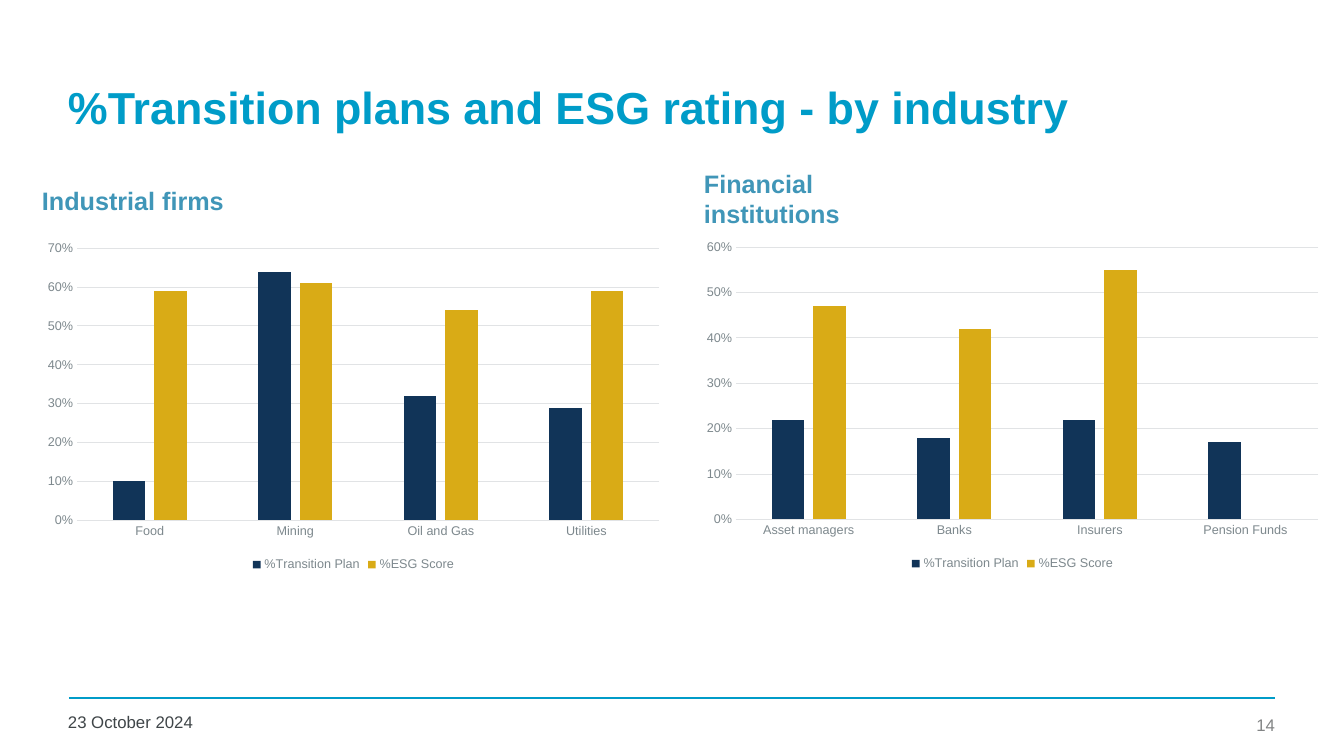
from lxml import etree
from pptx import Presentation
from pptx.chart.data import CategoryChartData
from pptx.dml.color import RGBColor
from pptx.enum.chart import XL_CHART_TYPE, XL_LEGEND_POSITION, XL_TICK_MARK
from pptx.enum.shapes import MSO_CONNECTOR
from pptx.enum.text import MSO_ANCHOR, PP_ALIGN
from pptx.oxml.ns import qn
from pptx.util import Pt

COLUMNS = XL_CHART_TYPE.COLUMN_CLUSTERED
BOTTOM = XL_LEGEND_POSITION.BOTTOM
NO_TICK = XL_TICK_MARK.NONE
STRAIGHT = MSO_CONNECTOR.STRAIGHT
TOP, MIDDLE = MSO_ANCHOR.TOP, MSO_ANCHOR.MIDDLE
LEFT, RIGHT = PP_ALIGN.LEFT, PP_ALIGN.RIGHT

EMU_PER_PX = 914400 / 100.8
SLIDE_SIZE = (1344, 756)

THEME = {
    "font": "Arial",
    "title": {"size": 32, "color": "009CC8", "bold": True},
    "heading": {"size": 18, "color": "4096B8", "bold": True},
    "date": {"size": 12, "color": "3F4548", "bold": False},
    "number": {"size": 12, "color": "828485", "bold": False},
    "chart": {"size": 10, "color": "3F4548", "bold": False},
    "label": {"size": 9, "color": "7D888D", "bold": False},
    "grid": "E1E3E5",
    "rule": "009CC8",
    "series": ["113458", "D9AB16"],
}

# text, style, (left, top, width, height), anchor, alignment
TEXTS = [
    ("%Transition plans and ESG rating - by industry", "title",
     (58, 44, 1219, 126), MIDDLE, LEFT),
    ("Industrial firms", "heading", (32, 180, 263, 40), TOP, LEFT),
    ("Financial institutions", "heading", (694, 163, 263, 40), TOP, LEFT),
    ("23 October 2024", "date", (58, 707, 296, 36), TOP, LEFT),
    ("14", "number", (1190, 706, 95, 37), MIDDLE, RIGHT),
]
FOOTER_RULE = (69, 698, 1275, 698)

SERIES_NAMES = ["%Transition Plan", "%ESG Score"]
CHART_SIZE = (637, 342)
CHARTS = [
    {"at": (35, 234), "max": 0.7,
     "rows": {"Food": (0.1, 0.59), "Mining": (0.64, 0.61),
              "Oil and Gas": (0.32, 0.54), "Utilities": (0.29, 0.59)}},
    {"at": (694, 233), "max": 0.6,
     "rows": {"Asset managers": (0.22, 0.47), "Banks": (0.18, 0.42),
              "Insurers": (0.22, 0.55), "Pension Funds": (0.17, None)}},
]


def px(*lengths):
    return [round(n * EMU_PER_PX) for n in lengths]


def style_font(font, style):
    fmt = THEME[style]
    for name, value in {"name": THEME["font"], "size": Pt(fmt["size"]),
                        "bold": fmt["bold"]}.items():
        setattr(font, name, value)
    font.color.rgb = RGBColor.from_string(fmt["color"])


def style_line(line, color, width):
    line.color.rgb = RGBColor.from_string(color)
    line.width = Pt(width)


def add_text(s, text, style, box, anchor, align):
    tf = s.shapes.add_textbox(*px(*box)).text_frame
    tf.word_wrap = True
    tf.vertical_anchor = anchor
    p = tf.paragraphs[0]
    p.alignment = align
    r = p.add_run()
    r.text = text
    style_font(r.font, style)


def add_rule(s, ends):
    rule = s.shapes.add_connector(STRAIGHT, *px(*ends))
    style_line(rule.line, THEME["rule"], 1)
    etree.SubElement(rule._element.spPr, qn("a:effectLst"))


def add_column_chart(s, at, rows, top_value):
    data = CategoryChartData(number_format="0%")
    data.categories = list(rows)
    for name, values in zip(SERIES_NAMES, zip(*rows.values())):
        data.add_series(name, values)
    chart = s.shapes.add_chart(COLUMNS, *px(*at, *CHART_SIZE), data).chart
    style_font(chart.font, "chart")
    chart.has_title = False
    chart.has_legend = True
    chart.legend.position = BOTTOM
    chart.legend.include_in_layout = False
    style_font(chart.legend.font, "label")

    plot = chart.plots[0]
    for name, value in {"gap_width": 219, "overlap": -27,
                        "vary_by_categories": False}.items():
        setattr(plot, name, value)
    for series, color in zip(plot.series, THEME["series"]):
        series.format.fill.solid()
        series.format.fill.fore_color.rgb = RGBColor.from_string(color)
        series.invert_if_negative = False

    cat_axis, val_axis = chart.category_axis, chart.value_axis
    for axis in (cat_axis, val_axis):
        axis.major_tick_mark = axis.minor_tick_mark = NO_TICK
        style_font(axis.tick_labels.font, "label")
    style_line(cat_axis.format.line, THEME["grid"], 0.75)
    val_axis.format.line.fill.background()
    for name, value in {"minimum_scale": 0, "maximum_scale": top_value,
                        "major_unit": 0.1, "has_major_gridlines": True}.items():
        setattr(val_axis, name, value)
    style_line(val_axis.major_gridlines.format.line, THEME["grid"], 0.75)
    val_axis.tick_labels.number_format = "0%"
    val_axis.tick_labels.number_format_is_linked = False


def main():
    prs = Presentation()
    prs.slide_width, prs.slide_height = px(*SLIDE_SIZE)
    s = prs.slides.add_slide(prs.slide_layouts[6])
    add_rule(s, FOOTER_RULE)
    for item in TEXTS:
        add_text(s, *item)
    for item in CHARTS:
        add_column_chart(s, item["at"], item["rows"], item["max"])
    prs.save("out.pptx")


if __name__ == "__main__":
    main()
